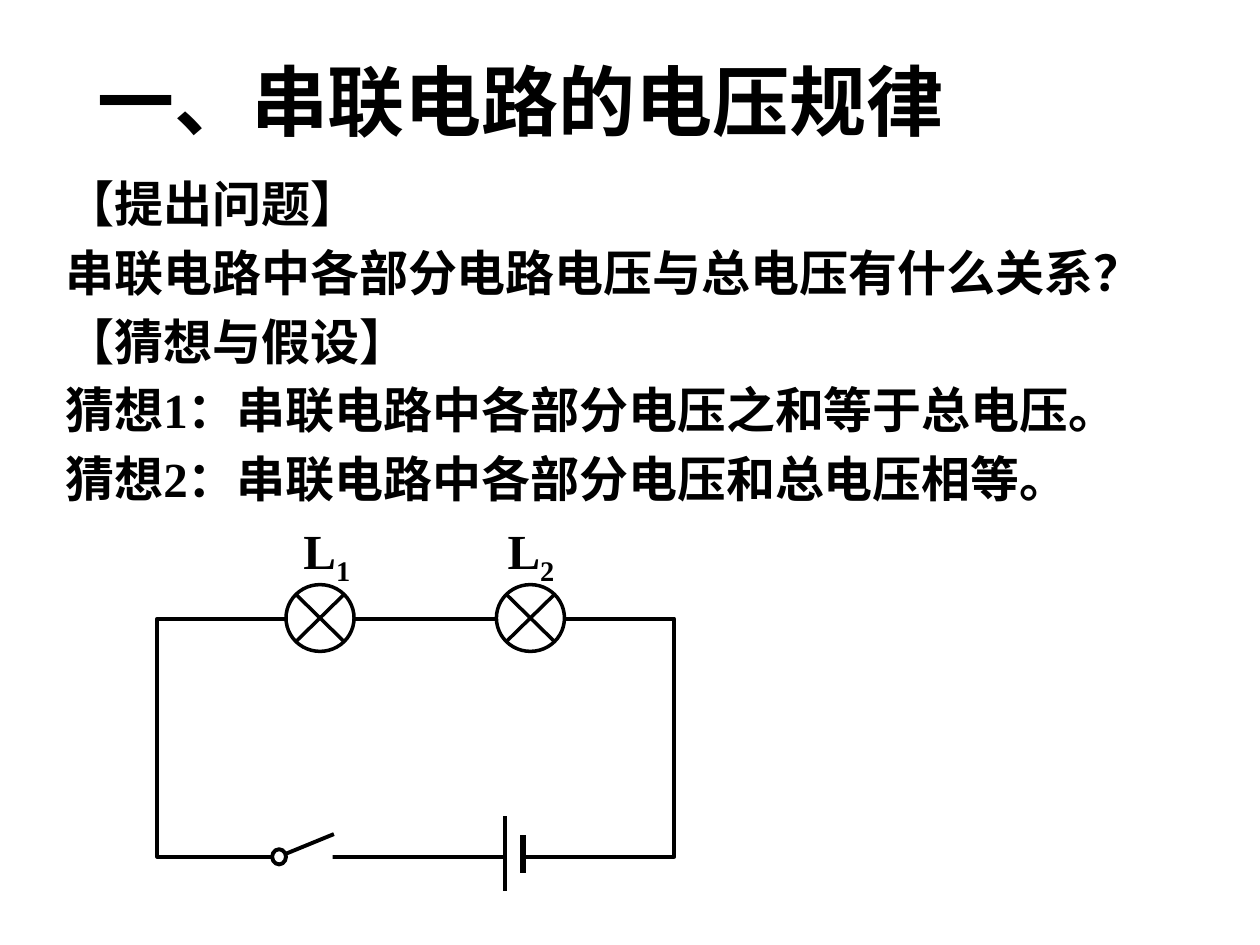
from lxml import etree
from pptx import Presentation
from pptx.dml.color import RGBColor
from pptx.enum import shapes, text
from pptx.oxml.ns import qn
from pptx.util import Inches, Pt

THEME = {
    "font": "Times New Roman",
    "ink": RGBColor(0, 0, 0),
    "paper": RGBColor(255, 255, 255),
    "title": 44,
    "body": 28,
    "wire": 2.25,
    "lamp": 2,
    "plate": 3,
}

TITLE = "一、串联电路的电压规律"
BODY = [
    "【提出问题】",
    "串联电路中各部分电路电压与总电压有什么关系？",
    "【猜想与假设】",
    "猜想1：串联电路中各部分电压之和等于总电压。",
    "猜想2：串联电路中各部分电压和总电压相等。",
]
TITLE_BOX = (0.67, 0.25, 8.5, 1.08)
BODY_BOX = (0.42, 1.33, 9.25, 3)
HANGING = 0.38

LOOP = (1.25, 4.91, 4.1, 1.89)
LAMP_SIZE = (0.54, 0.53)
LAMPS = [  # number, lamp left, label left
    ("1", 2.27, 2.31),
    ("2", 3.94, 3.93),
]
LAMP_TOP = 4.64
LABEL_TOP, LABEL_SIZE = 4.08, (0.6, 0.57)
GAPS = [(2.21, 6.62, 0.43, 0.3), (4.01, 6.68, 0.15, 0.15)]
PIVOT = (2.16, 6.74, 0.11, 0.12)
LINES = [  # start, end, weight
    ((2.21, 6.8), (2.65, 6.62), "wire"),
    ((4.01, 6.48), (4.01, 7.07), "wire"),
    ((4.15, 6.63), (4.15, 6.93), "plate"),
]


def inches(values):
    return [Inches(value) for value in values]


def place(shape, box):
    for name, value in zip(("left", "top", "width", "height"), inches(box)):
        setattr(shape, name, value)


def write(para, words, size):
    span = para.add_run()
    span.text = words
    formats = {"name": THEME["font"], "size": Pt(THEME[size]), "bold": True}
    for name, value in formats.items():
        setattr(span.font, name, value)
    span.font.color.rgb = THEME["ink"]
    return span


def add_part(page, kind, box, weight=None, filled=True):
    part = page.shapes.add_shape(kind, *inches(box))
    part.shadow.inherit = False
    if filled:
        part.fill.solid()
        part.fill.fore_color.rgb = THEME["paper"]
    else:
        part.fill.background()
    if weight:
        part.line.color.rgb = THEME["ink"]
        part.line.width = Pt(THEME[weight])
    else:
        part.line.fill.background()


def add_line(page, start, end, weight):
    line = page.shapes.add_connector(
        shapes.MSO_CONNECTOR.STRAIGHT, *inches(start + end))
    line.line.color.rgb = THEME["ink"]
    line.line.width = Pt(THEME[weight])
    etree.SubElement(line._element.spPr, qn("a:effectLst"))


def add_label(page, number, left):
    box = page.shapes.add_textbox(*inches((left, LABEL_TOP) + LABEL_SIZE))
    box.text_frame.word_wrap = False
    box.text_frame.auto_size = text.MSO_AUTO_SIZE.SHAPE_TO_FIT_TEXT
    para = box.text_frame.paragraphs[0]
    write(para, "L", "body")
    subscript = write(para, number, "body")
    subscript.font._element.set("baseline", "-25000")


def fill_text(page):
    title, body = page.shapes.title, page.placeholders[1]
    place(title, TITLE_BOX)
    place(body, BODY_BOX)
    for holder in (title, body):
        holder.text_frame.auto_size = text.MSO_AUTO_SIZE.NONE
    title.text_frame.vertical_anchor = text.MSO_ANCHOR.MIDDLE
    heading = title.text_frame.paragraphs[0]
    heading.alignment = text.PP_ALIGN.LEFT
    write(heading, TITLE, "title")
    for index, words in enumerate(BODY):
        frame = body.text_frame
        para = frame.add_paragraph() if index else frame.paragraphs[0]
        settings = para._element.get_or_add_pPr()
        settings.set("marL", str(Inches(HANGING)))
        settings.set("indent", str(-Inches(HANGING)))
        etree.SubElement(settings, qn("a:buNone"))
        write(para, words, "body")


def draw_circuit(page):
    kinds = shapes.MSO_SHAPE
    add_part(page, kinds.RECTANGLE, LOOP, "wire", filled=False)
    for gap in GAPS:
        add_part(page, kinds.RECTANGLE, gap)
    for line in LINES:
        add_line(page, *line)
    add_part(page, kinds.OVAL, PIVOT, "wire")
    for number, lamp_left, label_left in LAMPS:
        add_part(page, kinds.FLOWCHART_SUMMING_JUNCTION,
                 (lamp_left, LAMP_TOP) + LAMP_SIZE, "lamp")
        add_label(page, number, label_left)


def main():
    deck = Presentation()
    deck.slide_width, deck.slide_height = Inches(10), Inches(7.5)
    page = deck.slides.add_slide(deck.slide_layouts[1])
    fill_text(page)
    draw_circuit(page)
    deck.save("out.pptx")


if __name__ == "__main__":
    main()
